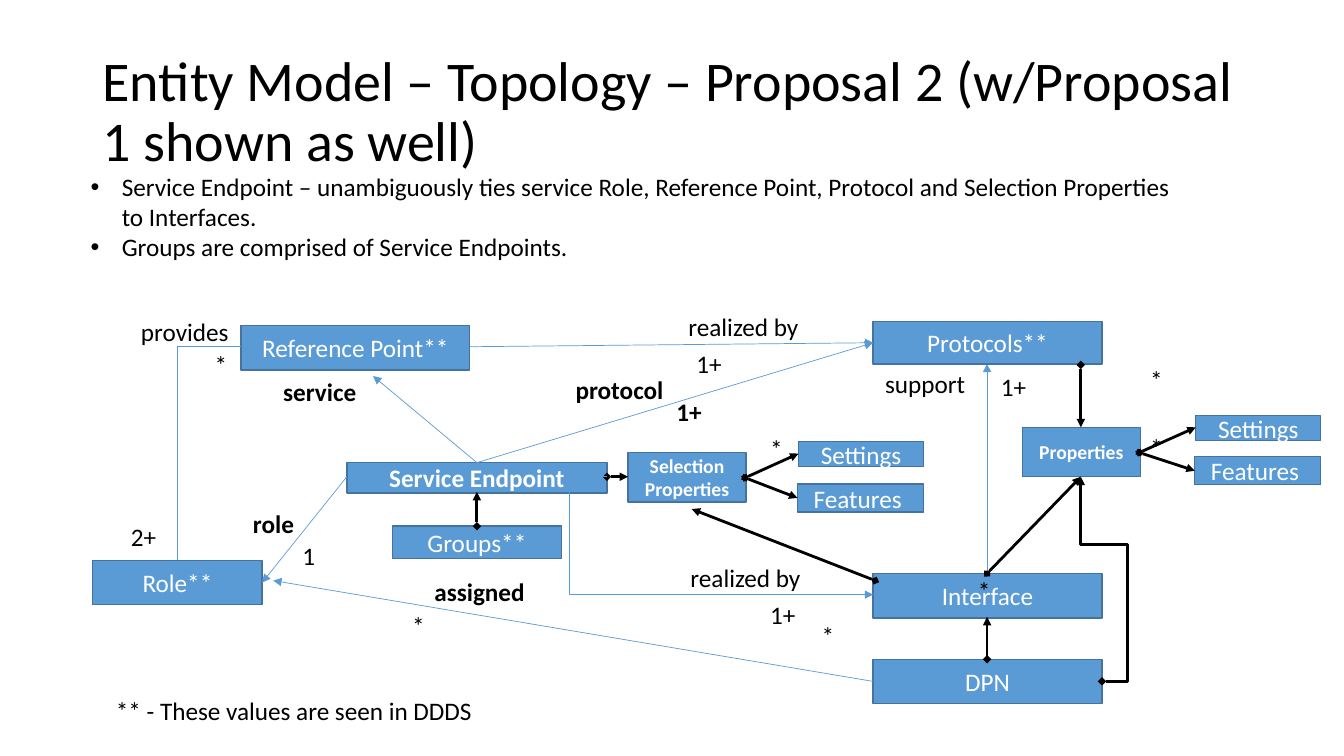
"""Build the entity model topology slide."""
from dataclasses import dataclass

from lxml.etree import SubElement
from pptx import Presentation
from pptx.dml.color import RGBColor
from pptx.enum.shapes import MSO_CONNECTOR as Connector, MSO_SHAPE as Shape
from pptx.enum.text import MSO_ANCHOR as Anchor, MSO_AUTO_SIZE as AutoSize, PP_ALIGN as Align
from pptx.oxml.ns import qn
from pptx.util import Inches, Pt


@dataclass(frozen=True)
class Theme:
    """Colours, font and type sizes of the slide."""
    font: str = "Calibri"
    text: RGBColor = RGBColor(0, 0, 0)
    box_text: RGBColor = RGBColor(255, 255, 255)
    fill: RGBColor = RGBColor(0x5B, 0x9B, 0xD5)
    outline: RGBColor = RGBColor(0x43, 0x73, 0x9E)
    title_size: int = 40
    body_size: int = 18
    small_size: int = 14
    outline_width: float = 1
    thin: float = 0.5
    thick: float = 2


class Diagram:
    """Draws diagram elements on one slide in one theme."""

    def __init__(self, slide, theme):
        self.shapes = slide.shapes
        self.theme = theme

    def format_text(self, text_frame, size, color, bold=False):
        for paragraph in text_frame.paragraphs:
            for run in paragraph.runs:
                run.font.name = self.theme.font
                run.font.size = Pt(size)
                run.font.bold = bold
                run.font.color.rgb = color

    def text(self, text, left, top, width, height=0.4, size=None, bold=False, wrap=False):
        shape = self.shapes.add_textbox(*map(Inches, (left, top, width, height)))
        frame = shape.text_frame
        frame.text = text
        frame.word_wrap = wrap
        frame.auto_size = AutoSize.SHAPE_TO_FIT_TEXT
        self.format_text(frame, size or self.theme.body_size, self.theme.text, bold)
        return frame

    def title(self, text, left, top, width, height):
        frame = self.text(text, left, top, width, height, self.theme.title_size, wrap=True)
        frame.auto_size = AutoSize.NONE
        frame.vertical_anchor = Anchor.MIDDLE
        frame.paragraphs[0].line_spacing = 0.9

    def bullets(self, lines, left, top, width, height, indent=0.31):
        frame = self.text("\n".join(lines), left, top, width, height, wrap=True)
        for paragraph in frame.paragraphs:
            properties = paragraph._p.get_or_add_pPr()
            properties.set("marL", str(Inches(indent)))
            properties.set("indent", str(-Inches(indent)))
            SubElement(properties, qn("a:buFont"), typeface="Arial")
            SubElement(properties, qn("a:buChar"), char="•")

    def box(self, text, left, top, width, height, size=None, bold=False):
        shape = self.shapes.add_shape(Shape.RECTANGLE, *map(Inches, (left, top, width, height)))
        shape.shadow.inherit = False
        shape.fill.solid()
        shape.fill.fore_color.rgb = self.theme.fill
        shape.line.color.rgb = self.theme.outline
        shape.line.width = Pt(self.theme.outline_width)
        frame = shape.text_frame
        frame.text = text
        frame.word_wrap = True
        frame.vertical_anchor = Anchor.MIDDLE
        frame.paragraphs[0].alignment = Align.CENTER
        self.format_text(frame, size or self.theme.body_size, self.theme.box_text, bold)

    def connector(self, start, end, color, width, head=None, tail=None, bend=None, adjust=()):
        kind = Connector.ELBOW if bend else Connector.STRAIGHT
        connector = self.shapes.add_connector(kind, *map(Inches, (*start, *end)))
        connector.line.color.rgb = color
        connector.line.width = Pt(width)
        properties = connector._element.spPr
        if bend:
            geometry = properties.find(qn("a:prstGeom"))
            geometry.set("prst", f"bentConnector{bend}")
            guides = geometry.find(qn("a:avLst"))
            for number, value in enumerate(adjust, 1):
                name = "adj" if len(adjust) == 1 and bend == 2 else f"adj{number}"
                SubElement(guides, qn("a:gd"), name=name, fmla=f"val {round(value * 100000)}")
        line = connector.line._get_or_add_ln()
        for tag, arrow in (("a:headEnd", head), ("a:tailEnd", tail)):
            if arrow:
                SubElement(line, qn(tag), type=arrow)
        SubElement(properties, qn("a:effectLst"))

    def relation(self, start, end, tail="triangle", **bend):
        self.connector(start, end, self.theme.fill, self.theme.thin, tail=tail, **bend)

    def composition(self, start, end, **bend):
        self.connector(start, end, self.theme.text, self.theme.thick, "diamond", "triangle", **bend)

    def property_group(self, name, left, top, features, settings):
        self.box(name, left, top, 1.17, 0.49, self.theme.small_size, True)
        self.box("Features ", *features, 1.25, 0.28)
        self.box("Settings", *settings, 1.24, 0.25)
        origin = (left + 1.16, top + 0.25)
        self.composition(origin, (settings[0], settings[1] + 0.12))
        self.composition(origin, (features[0], features[1] + 0.14))


BOXES = [
    ("Reference Point**", 2.39, 3.23, 2.27, 0.44),
    ("Role**", 0.92, 5.56, 1.68, 0.44),
    ("Protocols**", 8.66, 3.19, 2.27, 0.42),
    ("Interface", 8.66, 5.69, 2.27, 0.44),
    ("DPN", 8.66, 6.54, 2.27, 0.44),
    ("Groups**", 3.89, 5.22, 1.68, 0.32),
]
RELATIONS = [
    ((4.66, 3.44), (8.66, 3.4)),
    ((9.79, 5.69), (9.79, 3.61)),
    ((8.66, 6.76), (2.71, 5.76)),
    ((4.73, 4.59), (3.7, 3.73)),
    ((4.73, 4.59), (8.66, 3.4)),
    ((3.44, 4.73), (2.6, 5.78)),
]
COMPOSITIONS = [
    ((9.79, 6.54), (9.79, 6.12)),
    ((4.73, 5.22), (4.73, 4.88)),
    ((6.02, 4.73), (6.23, 4.73)),
    ((8.68, 5.76), (6.86, 5.05)),
    ((9.79, 5.69), (10.72, 4.73)),
    ((10.72, 3.62), (10.72, 4.24)),
]
LABELS = [
    ("provides", 1.3, 3.09, 1.08),
    ("support", 8.68, 3.61, 1),
    ("1+", 6.81, 3.41, 0.46),
    ("*", 2.03, 3.42, 0.33),
    ("*", 8.05, 6.11, 0.33),
    ("*", 3.99, 6.01, 0.33),
    ("2+", 1.2, 5.12, 0.46),
    ("** - These values are seen in DDDS", 1.05, 6.85, 3.78),
    ("1", 2.9, 5.31, 0.33),
    ("realized by", 6.73, 3.04, 1.31),
    ("realized by", 6.75, 5.53, 1.31),
    ("1+", 9.83, 3.63, 0.46),
    ("1+", 7.54, 5.9, 0.46),
    ("*", 7.54, 4.25, 0.33),
    ("*", 9.6, 5.66, 0.33),
    ("*", 11.31, 4.24, 0.33),
    ("*", 11.31, 3.57, 0.33),
]
BOLD_LABELS = [
    ("assigned", 4.21, 5.67, 1.1),
    ("service", 2.71, 3.68, 0.93),
    ("protocol", 5.61, 3.66, 1.08),
    ("1+", 6.61, 3.88, 0.46),
    ("role", 2.41, 4.99, 0.61),
]


def main():
    presentation = Presentation()
    presentation.slide_width, presentation.slide_height = Inches(13.33), Inches(7.5)
    slide = presentation.slides.add_slide(presentation.slide_layouts[6])
    diagram = Diagram(slide, Theme())
    diagram.title("Entity Model – Topology – Proposal 2 (w/Proposal 1 shown as well)",
                  0.92, 0.4, 11.63, 1.45)
    diagram.bullets([
        "Service Endpoint – unambiguously ties service Role, Reference Point, "
        "Protocol and Selection Properties to Interfaces.",
        "Groups are comprised of Service Endpoints.",
    ], 0.8, 1.65, 11.06, 1.01)
    for box in BOXES:
        diagram.box(*box)
    diagram.box("Service Endpoint", 3.44, 4.59, 2.58, 0.3, bold=True)
    diagram.property_group("Selection Properties", 6.23, 4.49, (7.91, 4.8), (7.92, 4.38))
    diagram.property_group("Properties", 10.14, 4.24, (11.85, 4.53), (11.86, 4.12))
    for start, end in RELATIONS:
        diagram.relation(start, end)
    for start, end in COMPOSITIONS:
        diagram.composition(start, end)
    diagram.relation((2.39, 3.44), (1.76, 5.56), tail=None, bend=2)
    diagram.relation((6.02, 4.73), (8.66, 5.9), bend=3, adjust=[-0.14])
    diagram.composition((10.93, 6.76), (10.72, 4.73), bend=4, adjust=[-1.21, 0.67])
    for label in LABELS:
        diagram.text(*label)
    for label in BOLD_LABELS:
        diagram.text(*label, bold=True)
    presentation.save("out.pptx")


if __name__ == "__main__":
    main()
